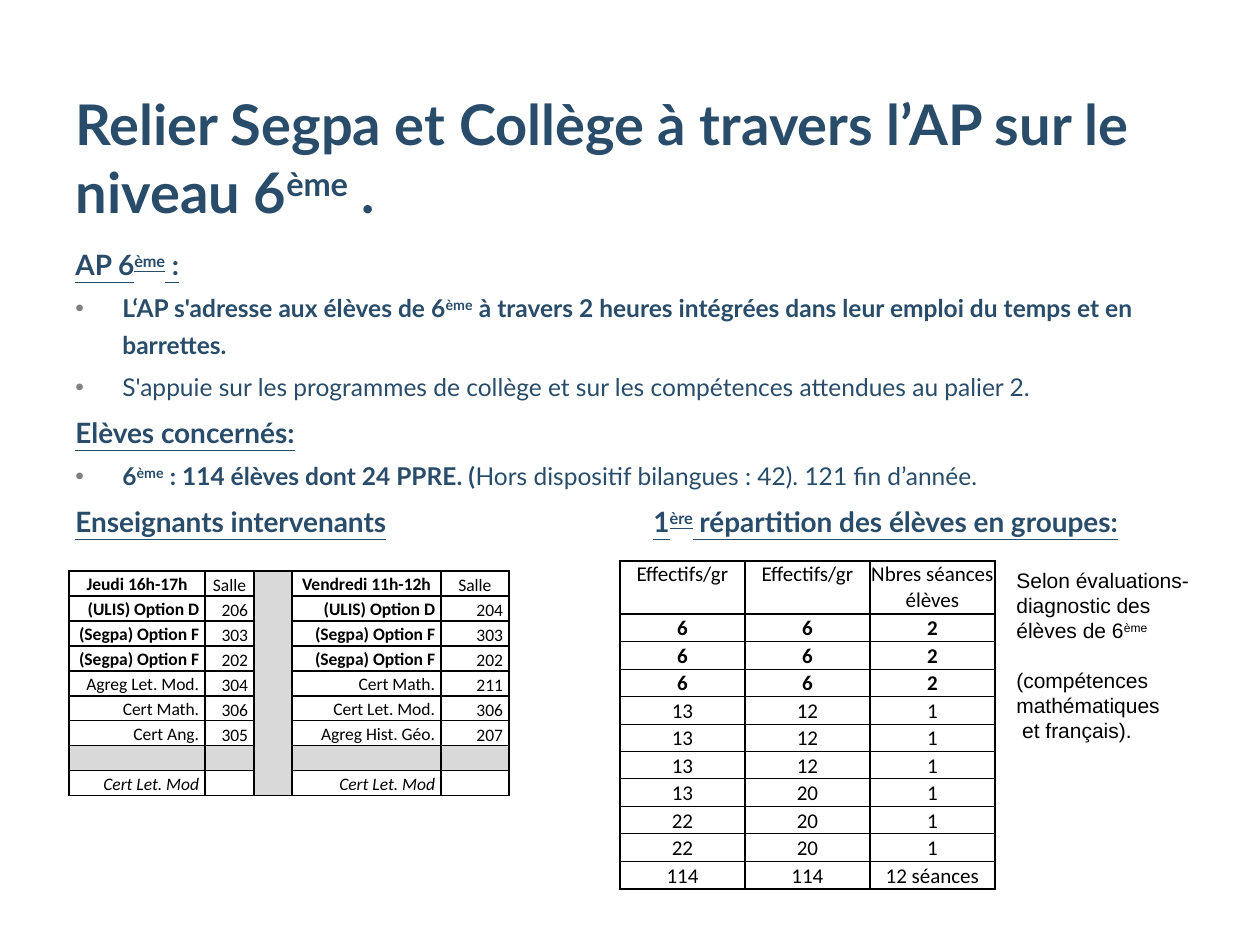
from lxml import etree
from pptx import Presentation
from pptx.dml.color import RGBColor
from pptx.enum.text import MSO_ANCHOR, MSO_AUTO_SIZE, PP_ALIGN
from pptx.oxml.ns import qn
from pptx.util import Pt

TOP, MIDDLE, BOTTOM = MSO_ANCHOR.TOP, MSO_ANCHOR.MIDDLE, MSO_ANCHOR.BOTTOM
LEFT, CENTER, RIGHT = PP_ALIGN.LEFT, PP_ALIGN.CENTER, PP_ALIGN.RIGHT
FIXED = MSO_AUTO_SIZE.NONE

NAVY = RGBColor(0x28, 0x4C, 0x6A)
BLACK = RGBColor(0, 0, 0)
GREY = RGBColor(0xD9, 0xD9, 0xD9)
BULLET_GREY = "808080"
EMU_PER_PX = 914400 / 126

# Runs are (text, style): b bold, u underlined, ^ superscript
TITLE = [("Relier Segpa et Collège à travers l’AP sur le niveau 6", "b"),
         ("ème", "b^"), (" .", "b")]
HEADING, BULLET = "heading", "bullet"
BODY = [
    (HEADING, [("AP 6", "bu"), ("ème", "bu^"), (" :", "bu")]),
    (BULLET, [("L‘AP s'adresse aux élèves de 6", "b"), ("ème", "b^"),
              (" à travers 2 heures intégrées dans leur emploi du temps et en barrettes.", "b")]),
    (BULLET, [("S'appuie sur les programmes de collège et sur les compétences "
               "attendues au palier 2.", "")]),
    (HEADING, [("Elèves concernés:", "bu")]),
    (BULLET, [("6", "b"), ("ème", "b^"), (" : 114 élèves dont 24 PPRE. (", "b"),
              ("Hors dispositif bilangues : 42). 121 fin d’année.", "")]),
    (HEADING, [("Enseignants intervenants", "bu"), ("\t", "b"), ("1", "bu"),
               ("ère", "bu^"), (" répartition des élèves en groupes:", "bu")]),
]
BODY_SIZES = {HEADING: 16, BULLET: 14}

TEACHERS = [
    ("Jeudi 16h-17h", "Salle", "", "Vendredi 11h-12h", "Salle"),
    ("(ULIS) Option D", "206", "", "(ULIS) Option D", "204"),
    ("(Segpa) Option F", "303", "", "(Segpa) Option F", "303"),
    ("(Segpa) Option F", "202", "", "(Segpa) Option F", "202"),
    ("Agreg Let. Mod.", "304", "", "Cert Math.", "211"),
    ("Cert Math.", "306", "", "Cert Let. Mod.", "306"),
    ("Cert Ang.", "305", "", "Agreg Hist. Géo.", "207"),
    ("", "", "", "", ""),
    ("Cert Let. Mod", "", "", "Cert Let. Mod", ""),
]
TEACHER_COLUMNS = (136, 49, 38, 149, 68)
ROOM_COLUMNS = (1, 4)
GAP_COLUMN, GAP_ROW, RESERVE_ROW = 2, 7, 8
BOLD_ROWS = range(4)

GROUPS = [
    ("Effectifs/gr", "Effectifs/gr", "Nbres séances\nélèves"),
    *[("6", "6", "2")] * 3,
    *[("13", "12", "1")] * 3,
    ("13", "20", "1"),
    *[("22", "20", "1")] * 2,
    ("114", "114", "12 séances"),
]
GROUP_COLUMNS = (125, 125, 125)
GROUP_HEIGHT, GROUP_HEADER = 328, 53

SIDE_NOTE = [
    [("Selon évaluations-diagnostic des élèves de 6", ""), ("ème", "^")],
    [("(compétences mathématiques", "")],
    [(" et français).", "")],
]


def px(length):
    return round(length * EMU_PER_PX)


def write_runs(paragraph, runs, size, font_name, color):
    for text, style in runs:
        run = paragraph.add_run()
        run.text = text
        font = run.font
        font.size, font.name, font.color.rgb = Pt(size), font_name, color
        font.bold, font.underline = "b" in style, "u" in style
        if "^" in style:
            font._element.set("baseline", "30000")


def add_text_frame(slide, *box):
    frame = slide.shapes.add_textbox(*map(px, box)).text_frame
    frame.word_wrap = True
    return frame


def next_paragraph(frame, index):
    return frame.add_paragraph() if index else frame.paragraphs[0]


def add_bullet(paragraph):
    props = paragraph._p.get_or_add_pPr()
    props.set("marL", str(px(47)))
    props.set("indent", str(-px(47)))
    color = etree.SubElement(props, qn("a:buClr"))
    etree.SubElement(color, qn("a:srgbClr"), val=BULLET_GREY)
    etree.SubElement(props, qn("a:buFont"), typeface="Arial")
    etree.SubElement(props, qn("a:buChar"), char="•")


def add_tab_stop(paragraph, position):
    stops = etree.SubElement(paragraph._p.get_or_add_pPr(), qn("a:tabLst"))
    etree.SubElement(stops, qn("a:tab"), pos=str(px(position)), algn="l")


def set_borders(cell, left=1, right=1, top=1, bottom=1):
    """Draw black borders of the given widths in points, ahead of the cell's fill."""
    props = cell._tc.get_or_add_tcPr()
    widths = (("a:lnL", left), ("a:lnR", right), ("a:lnT", top), ("a:lnB", bottom))
    for place, (tag, width) in enumerate(widths):
        line = etree.Element(qn(tag), w=str(Pt(width)))
        fill = etree.SubElement(line, qn("a:solidFill"))
        etree.SubElement(fill, qn("a:srgbClr"), val=str(BLACK))
        props.insert(place, line)


def add_plain_table(slide, left, top, columns, row_heights):
    frame = slide.shapes.add_table(len(row_heights), len(columns), px(left), px(top),
                                   px(sum(columns)), sum(row_heights))
    table = frame.table
    table.first_row = table.horz_banding = False
    for column, width in zip(table.columns, columns):
        column.width = px(width)
    for row, height in zip(table.rows, row_heights):
        row.height = height
    return table


def fill_cell(cell, text, size, align, anchor, margins, bold=False, italic=False,
              spacing=1.0, background=None):
    cell.margin_left, cell.margin_top, cell.margin_right, cell.margin_bottom = map(px, margins)
    cell.vertical_anchor = anchor
    if background is None:
        cell.fill.background()
    else:
        cell.fill.solid()
        cell.fill.fore_color.rgb = background
    cell.text_frame.text = text
    for paragraph in cell.text_frame.paragraphs:
        paragraph.alignment, paragraph.line_spacing = align, spacing
        for run in paragraph.runs:
            font = run.font
            font.size, font.name, font.color.rgb = Pt(size), "Calibri", BLACK
            font.bold, font.italic = bold, italic
        if not text:
            etree.SubElement(paragraph._p, qn("a:endParaRPr"), sz=str(size * 100))


def add_title(slide):
    title = slide.shapes.title
    title.left, title.top, title.width, title.height = map(px, (63, 94, 1113, 126))
    frame = title.text_frame
    frame.auto_size, frame.vertical_anchor = FIXED, MIDDLE
    frame.paragraphs[0].alignment = LEFT
    write_runs(frame.paragraphs[0], TITLE, 32, "Lato", NAVY)


def add_body(slide):
    frame = add_text_frame(slide, 63, 233, 1113, 358)
    for index, (kind, runs) in enumerate(BODY):
        paragraph = next_paragraph(frame, index)
        size = BODY_SIZES[kind]
        if kind == BULLET:
            add_bullet(paragraph)
        elif ("\t", "b") in runs:
            add_tab_stop(paragraph, 578)
        paragraph.line_spacing = 1.25
        if index:
            paragraph.space_before = Pt(size * 0.2)
        write_runs(paragraph, runs, size, "Lato", NAVY)


def add_teacher_table(slide):
    table = add_plain_table(slide, 69, 571, TEACHER_COLUMNS, [px(25)] * len(TEACHERS))
    for r, row in enumerate(TEACHERS):
        for c, text in enumerate(row):
            is_room = c in ROOM_COLUMNS
            cell = table.cell(r, c)
            fill_cell(cell, text, 10, RIGHT if r else CENTER, BOTTOM if is_room else TOP,
                      (6, 0, 6, 0), bold=r in BOLD_ROWS and not is_room,
                      italic=r == RESERVE_ROW, spacing=1.15,
                      background=GREY if r == GAP_ROW or c == GAP_COLUMN else None)
            set_borders(cell)
    table.cell(0, GAP_COLUMN).merge(table.cell(len(TEACHERS) - 1, GAP_COLUMN))


def add_group_table(slide):
    last = len(GROUPS) - 1
    row_height = px(GROUP_HEIGHT - GROUP_HEADER) // last
    table = add_plain_table(slide, 620, 561, GROUP_COLUMNS,
                            [px(GROUP_HEADER)] + [row_height] * last)
    for r, row in enumerate(GROUPS):
        for c, text in enumerate(row):
            cell = table.cell(r, c)
            fill_cell(cell, text, 12, CENTER, BOTTOM if r else TOP, (1, 1, 1, 0),
                      bold=1 <= r <= 3)
            set_borders(cell, top=1 if r in (0, 1, last) else 0.5,
                        bottom=1 if r in (0, last - 1, last) else 0.5)


def add_side_note(slide):
    frame = add_text_frame(slide, 1004, 561, 207, 217)
    for index, runs in enumerate(SIDE_NOTE):
        paragraph = next_paragraph(frame, index)
        if index == 1:
            paragraph.space_before = Pt(14)
        write_runs(paragraph, runs, 12, "Arial", BLACK)


def main():
    deck = Presentation()
    deck.slide_width, deck.slide_height = px(1260), px(945)
    slide = deck.slides.add_slide(deck.slide_layouts[5])
    add_title(slide)
    add_body(slide)
    add_teacher_table(slide)
    add_group_table(slide)
    add_side_note(slide)
    deck.save("out.pptx")


if __name__ == "__main__":
    main()
